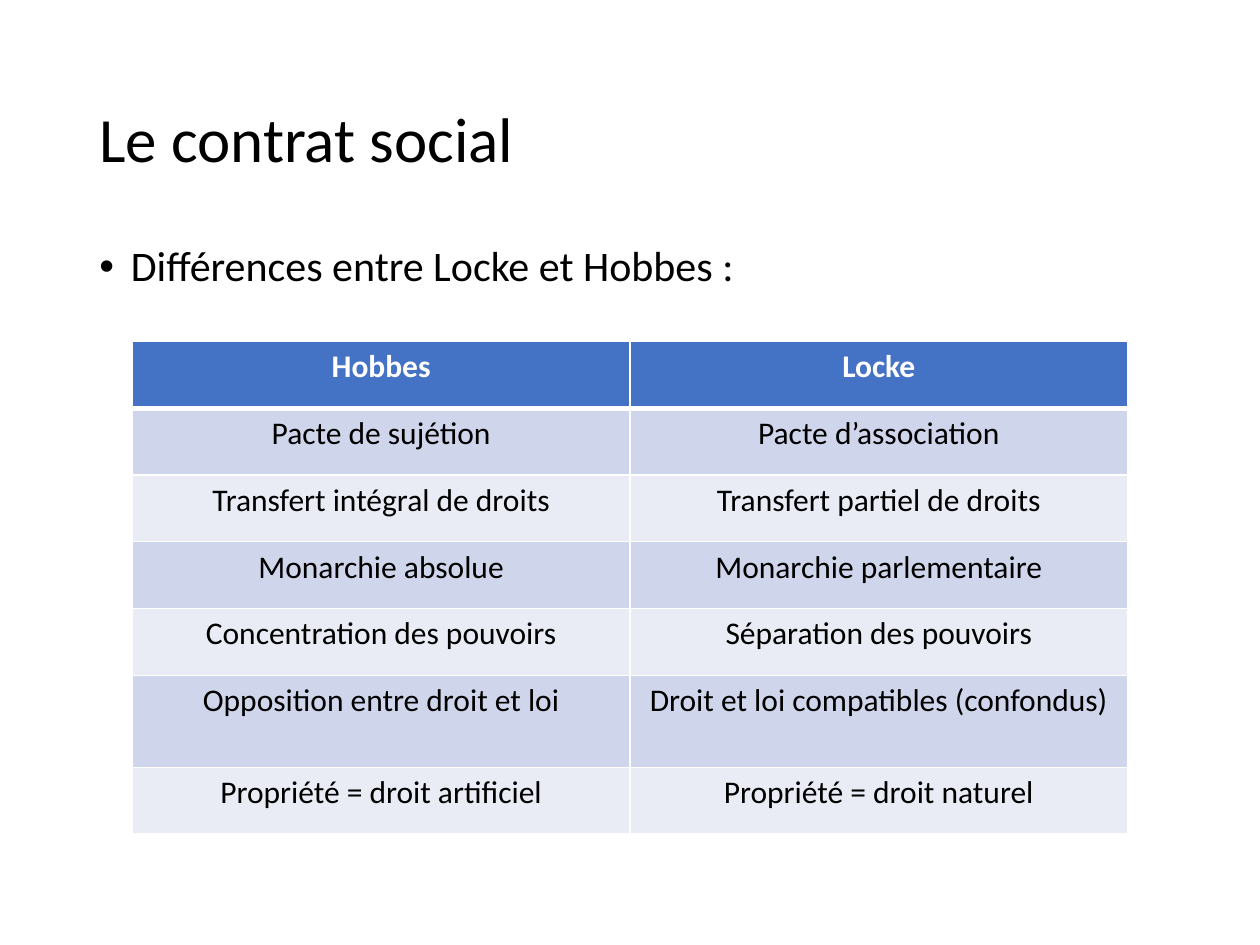
from lxml.etree import SubElement
from pptx import Presentation
from pptx.dml.color import RGBColor
from pptx.enum.text import MSO_ANCHOR, PP_ALIGN
from pptx.oxml.ns import qn
from pptx.util import Inches, Pt

TITLE = "Le contrat social"
BULLET = "Différences entre Locke et Hobbes :"
ROWS = [
    ("Hobbes", "Locke"),
    ("Pacte de sujétion", "Pacte d’association"),
    ("Transfert intégral de droits", "Transfert partiel de droits"),
    ("Monarchie absolue", "Monarchie parlementaire"),
    ("Concentration des pouvoirs", "Séparation des pouvoirs"),
    ("Opposition entre droit et loi", "Droit et loi compatibles (confondus)"),
    ("Propriété = droit artificiel", "Propriété = droit naturel"),
]
ROW_H, TALL_ROW, TALL_H = 0.53, 5, 0.73
COL_W = 3.95
COLORS = {"text": "000000", "white": "FFFFFF", "header": "4472C4",
          "odd": "CFD5EA", "even": "E9EBF5"}


def rgb(name):
    return RGBColor.from_string(COLORS[name])


def write(tf, text, color="text", **font):
    p = tf.paragraphs[0]
    r = p.add_run()
    r.text = text
    r.font.color.rgb = rgb(color)
    for key, value in {"name": "Calibri", **font}.items():
        setattr(r.font, key, value)
    return p


def add_text(s, box, text, size, anchor):
    tf = s.shapes.add_textbox(*map(Inches, box)).text_frame
    tf.word_wrap = True
    tf.vertical_anchor = anchor
    p = write(tf, text, size=Pt(size))
    p.line_spacing = 0.9
    return p


def add_borders(cell, bottom):
    tcPr = cell._tc.get_or_add_tcPr()
    widths = {"a:lnL": 1, "a:lnR": 1, "a:lnT": 1, "a:lnB": bottom}
    for i, (tag, width) in enumerate(widths.items()):
        ln = SubElement(tcPr, qn(tag), w=str(Pt(width)))
        fill = SubElement(ln, qn("a:solidFill"))
        SubElement(fill, qn("a:srgbClr"), val=COLORS["white"])
        tcPr.insert(i, ln)  # borders come before the fill


prs = Presentation()
prs.slide_width, prs.slide_height = Inches(10), Inches(7.5)
s = prs.slides.add_slide(prs.slide_layouts[6])

# Title and bullet
add_text(s, (0.69, 0.4, 8.62, 1.45), TITLE, 36, MSO_ANCHOR.MIDDLE)
p = add_text(s, (0.69, 1.9, 8.62, 5.49), BULLET, 24, MSO_ANCHOR.TOP)
p.space_before = Pt(10)
pPr = p._p.get_or_add_pPr()
pPr.set("marL", str(Inches(0.25)))
pPr.set("indent", str(Inches(-0.25)))
SubElement(pPr, qn("a:buFont"), typeface="Arial")
SubElement(pPr, qn("a:buChar"), char="•")

# Comparison table
heights = [TALL_H if i == TALL_ROW else ROW_H for i in range(len(ROWS))]
table = s.shapes.add_table(len(ROWS), 2, Inches(1.05), Inches(2.71),
                           Inches(2 * COL_W), Inches(sum(heights))).table
for col in table.columns:
    col.width = Inches(COL_W)
for i, (texts, height) in enumerate(zip(ROWS, heights)):
    table.rows[i].height = Inches(height)
    header = i == 0
    band = "header" if header else "odd" if i % 2 else "even"
    for j, text in enumerate(texts):
        cell = table.cell(i, j)
        cell.fill.solid()
        cell.fill.fore_color.rgb = rgb(band)
        add_borders(cell, bottom=3 if header else 1)
        p = write(cell.text_frame, text, "white" if header else "text",
                  size=Pt(18), bold=header)
        p.alignment = PP_ALIGN.CENTER

prs.save("out.pptx")
